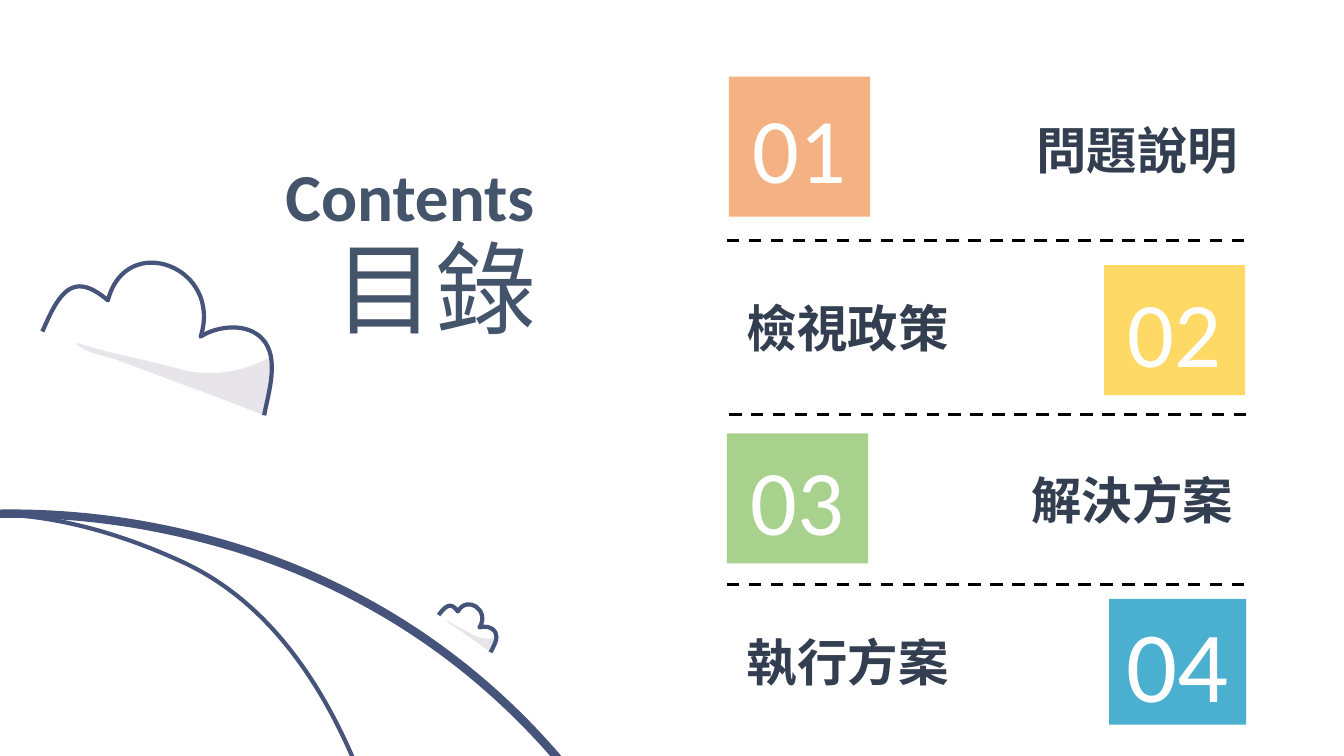
import math
import pptx
import pptx.util
import pptx.dml.color
import pptx.enum.dml
import pptx.enum.shapes
import pptx.enum.text
import lxml.etree
import pptx.oxml.ns

Inches = pptx.util.Inches
RGBColor = pptx.dml.color.RGBColor
PP_ALIGN = pptx.enum.text.PP_ALIGN
ANCHOR = pptx.enum.text.MSO_ANCHOR
qn = pptx.oxml.ns.qn
SubElement = lxml.etree.SubElement

SLATE = RGBColor(0x44, 0x54, 0x6A)
DARK = RGBColor(0x33, 0x3F, 0x50)
INK = RGBColor(0x46, 0x53, 0x7A)
SHADE = RGBColor(0xE7, 0xE4, 0xEA)
WHITE = RGBColor(0xFF, 0xFF, 0xFF)
BLACK = RGBColor(0x00, 0x00, 0x00)
ORANGE = RGBColor(0xF4, 0xB1, 0x83)
YELLOW = RGBColor(0xFF, 0xD9, 0x66)
GREEN = RGBColor(0xA9, 0xD1, 0x8E)
BLUE = RGBColor(0x4B, 0xB0, 0xD0)
CJK, LATIN = "Noto Sans CJK SC", "Calibri"

# Each outline is a start point, then three points per Bézier segment
BIG_HILL = [(6.49, 17.44), (8.7, 13.19), (7.28, 6.67), (1.97, 5.33),
            (-3.61, 3.91), (-9.01, 9.2), (-8.29, 14.56),
            (-7.35, 21.4), (1.33, 24.09), (5.68, 18.68),
            (5.99, 18.29), (6.26, 17.88), (6.49, 17.44)]
SMALL_HILL = [(0.57, 21.23), (4.38, 19.99), (4.71, 13.79), (4.24, 10.47),
              (4.01, 8.83), (3.51, 6.37), (1.82, 5.58),
              (-3.5, 3.11), (-5.71, 10.71), (-5.37, 14.33),
              (-5.12, 17.07), (-2.92, 22.36), (0.57, 21.23)]
CLOUD_SHADE = [(0.75, 3.4), (1.18, 3.53), (1.51, 3.58), (1.81, 3.67),
               (2.1, 3.74), (2.41, 3.69), (2.67, 3.55),
               (2.73, 3.67), (2.62, 4.12), (2.62, 4.12),
               (2.29, 3.99), (1.97, 3.87), (1.64, 3.75),
               (1.48, 3.69), (1.32, 3.63), (1.16, 3.57),
               (1.04, 3.53), (0.83, 3.5), (0.75, 3.4)]
CLOUD_EDGE = [(0.42, 3.29), (0.49, 3.13), (0.56, 2.97), (0.66, 2.89),
              (0.76, 2.81), (0.88, 2.82), (1.07, 2.98),
              (1.16, 2.63), (1.45, 2.55), (1.68, 2.64),
              (1.92, 2.73), (2.1, 3), (1.99, 3.34),
              (2.16, 3.23), (2.45, 3.2), (2.6, 3.36),
              (2.78, 3.55), (2.66, 3.9), (2.62, 4.12)]
CLOUD_CENTER = (1.7, 3.21)


def write(tf, text, *, size, font, color, bold=False, align=PP_ALIGN.LEFT,
          anchor=ANCHOR.TOP, wrap=False):
    tf.word_wrap = wrap
    tf.vertical_anchor = anchor
    p = tf.paragraphs[0]
    p.alignment = align
    r = p.add_run()
    r.text = text
    r.font.size = pptx.util.Pt(size)
    r.font.bold = bold
    r.font.color.rgb = color
    r.font.name = font
    SubElement(r.font._element, qn("a:ea")).set("typeface", font)


def label(slide, box, text, **style):
    sp = slide.shapes.add_textbox(*map(Inches, box))
    write(sp.text_frame, text, **style)
    sp.text_frame.auto_size = pptx.enum.text.MSO_AUTO_SIZE.SHAPE_TO_FIT_TEXT


def sample(points, steps=8):
    """Return points on the curve, which give its true extent."""
    found = [points[0]]
    for i in range(0, len(points) - 1, 3):
        for k in range(1, steps + 1):
            t = k / steps
            u = 1 - t
            weights = (u ** 3, 3 * u * u * t, 3 * u * t * t, t ** 3)
            found.append(tuple(sum(w * pt[axis] for w, pt in
                                   zip(weights, points[i:i + 4]))
                               for axis in (0, 1)))
    return found


def curve(slide, points, *, fill=None, width=None, close=True):
    points = [(Inches(x), Inches(y)) for x, y in points]
    extent = sample(points)
    builder = slide.shapes.build_freeform(*extent[0])
    builder.add_line_segments(extent[1:], close=False)
    sp = builder.convert_to_shape()
    sp.shadow.inherit = False

    # Swap the straight segments for Bézier segments
    outline = sp._element.find(".//" + qn("a:path"))
    for segment in outline.findall(qn("a:lnTo")):
        outline.remove(segment)
    for i in range(1, len(points), 3):
        bezier = SubElement(outline, qn("a:cubicBezTo"))
        for x, y in points[i:i + 3]:
            pt = SubElement(bezier, qn("a:pt"))
            pt.set("x", str(x - sp.left))
            pt.set("y", str(y - sp.top))
    if close:
        SubElement(outline, qn("a:close"))

    if fill is None:
        sp.fill.background()
    else:
        sp.fill.solid()
        sp.fill.fore_color.rgb = fill
    if width is None:
        sp.line.fill.background()
    else:
        sp.line.color.rgb = INK
        sp.line.width = pptx.util.Pt(width)


def add_heading(slide, x, y):
    label(slide, (x, y, 2.69, 0.91), "Contents", size=48, font=LATIN,
          color=SLATE, bold=True, align=PP_ALIGN.RIGHT)
    title = slide.shapes.title
    title.left, title.top = Inches(x + 0.49), Inches(y + 0.71)
    title.width, title.height = Inches(2.22), Inches(1.31)
    write(title.text_frame, "目錄", size=72, font=CJK, color=SLATE,
          align=PP_ALIGN.RIGHT)


def add_hills(slide, x, y):
    for hill, width in ((BIG_HILL, 6), (SMALL_HILL, 3)):
        curve(slide, [(x + px, y + py) for px, py in hill], width=width)


def add_cloud(slide, cx, cy, scale=1, turn=0):
    cos, sin = (scale * f(math.radians(turn)) for f in (math.cos, math.sin))

    def place(points):
        offsets = [(px - CLOUD_CENTER[0], py - CLOUD_CENTER[1])
                   for px, py in points]
        return [(cx + dx * cos - dy * sin, cy + dx * sin + dy * cos)
                for dx, dy in offsets]

    curve(slide, place(CLOUD_SHADE), fill=SHADE)
    curve(slide, place(CLOUD_EDGE), width=3, close=False)


def add_entry(slide, x, y, number, text, color, card, text_at, size):
    """Place a numbered card and its label relative to the list corner."""
    dx, dy, w, h = card
    sp = slide.shapes.add_shape(pptx.enum.shapes.MSO_SHAPE.RECTANGLE,
                                *map(Inches, (x + dx, y + dy, w, h)))
    sp.shadow.inherit = False
    sp.fill.solid()
    sp.fill.fore_color.rgb = color
    sp.line.fill.background()
    write(sp.text_frame, number, size=size, font=LATIN, color=WHITE,
          align=PP_ALIGN.CENTER, anchor=ANCHOR.MIDDLE, wrap=True)
    label(slide, (x + text_at[0], y + text_at[1], 2.22, 0.71), text,
          size=36, font=CJK, color=DARK, bold=True)


def add_divider(slide, x, y, length=5.19):
    line = slide.shapes.add_connector(
        pptx.enum.shapes.MSO_CONNECTOR.STRAIGHT,
        *map(Inches, (x, y, x + length, y)))
    line.line.color.rgb = BLACK
    line.line.width = pptx.util.Pt(2.25)
    line.line.dash_style = pptx.enum.dml.MSO_LINE.DASH
    SubElement(line._element.spPr, qn("a:effectLst"))


def add_contents(slide, x, y):
    # Number, label, colour, card box, label corner, number size
    entries = [
        ("01", "問題說明", ORANGE, (0.02, 0, 1.4, 1.39), (2.97, 0.37), 66),
        ("02", "檢視政策", YELLOW, (3.74, 1.87, 1.4, 1.29), (0.1, 2.14), 66),
        ("03", "解決方案", GREEN, (0, 3.54, 1.4, 1.29), (2.92, 3.84), 66),
        ("04", "執行方案", BLUE, (3.79, 5.18, 1.36, 1.25), (0.1, 5.45), 72),
    ]
    for entry in entries:
        add_entry(slide, x, y, *entry)
    for dx, dy in ((0, 1.63), (0.02, 3.35), (0, 5.04)):
        add_divider(slide, x + dx, y + dy)


def main():
    prs = pptx.Presentation()
    prs.slide_width, prs.slide_height = Inches(13.33), Inches(7.5)
    slide = prs.slides.add_slide(prs.slide_layouts[5])
    add_heading(slide, 2.71, 1.48)
    add_hills(slide, 0, 0)
    add_cloud(slide, *CLOUD_CENTER)
    add_cloud(slide, 4.69, 6.17, scale=0.27, turn=15)
    add_contents(slide, 7.21, 0.76)
    prs.save("out.pptx")


if __name__ == "__main__":
    main()
